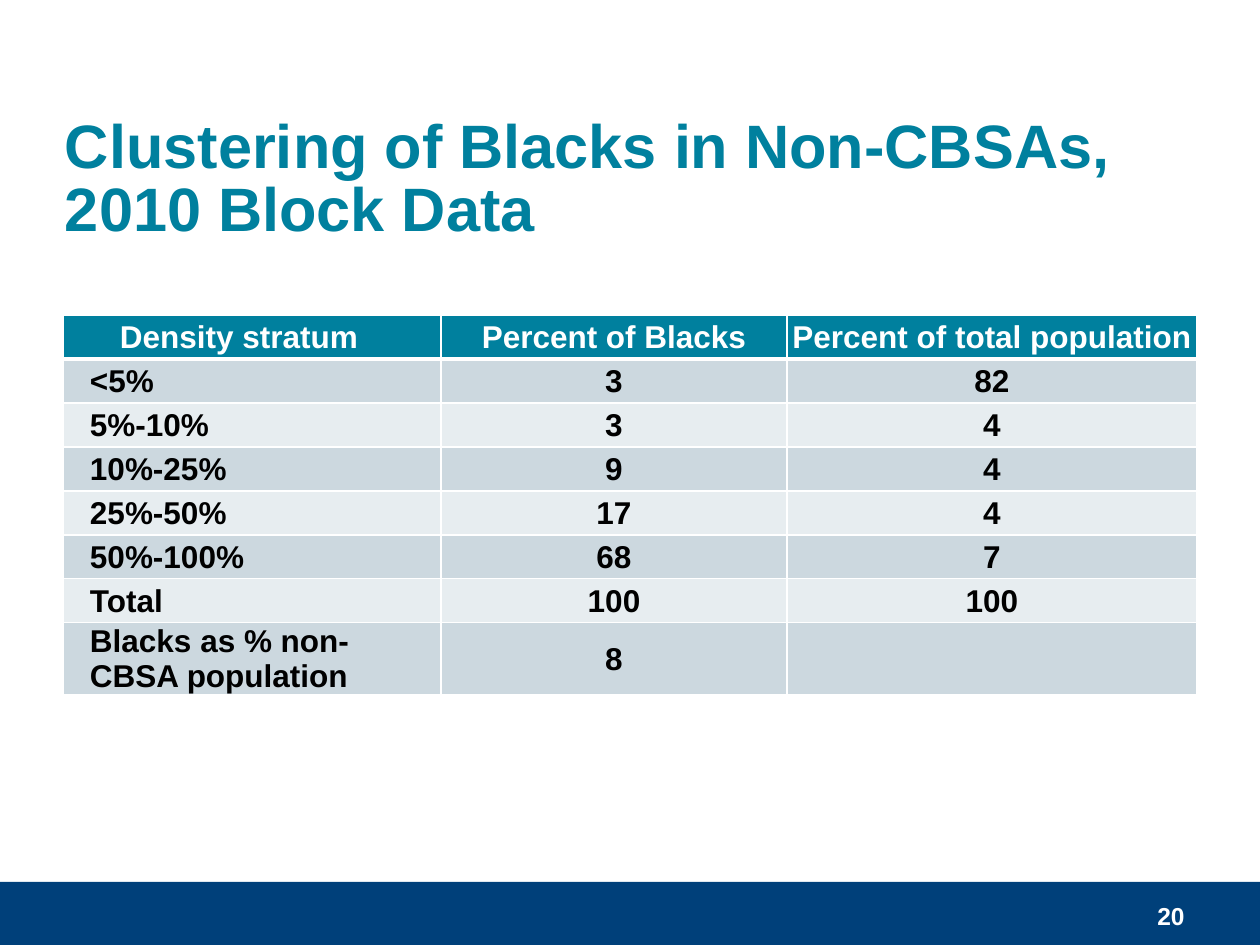
from lxml.etree import SubElement
from pptx import Presentation
from pptx.dml.color import RGBColor as Color
from pptx.enum.shapes import MSO_SHAPE as Shape
from pptx.enum.text import MSO_ANCHOR as Anchor, MSO_AUTO_SIZE as AutoSize, PP_ALIGN as Align
from pptx.oxml.ns import qn
from pptx.util import Pt

EMU_PER_PX = 914400 / 126
COLORS = {
    "teal": "00809E",
    "navy": "00407A",
    "band_dark": "CCD8DF",
    "band_light": "E7EDF0",
    "white": "FFFFFF",
    "black": "000000",
}


def px(length):
    return round(length * EMU_PER_PX)


def color(name):
    return Color.from_string(COLORS[name])


def write(frame, text, size=18, ink="black", align=Align.LEFT, leading=None):
    """Fill a text frame; each line of the text becomes a paragraph."""
    frame.word_wrap = True
    frame.text = text
    for para in frame.paragraphs:
        para.alignment = align
        if leading:
            para.line_spacing = Pt(leading)
        for span in para.runs:
            span.font.name = "Arial"
            span.font.size = Pt(size)
            span.font.bold = True
            span.font.color.rgb = color(ink)


def add_borders(cell, widths):
    properties = cell._tc.get_or_add_tcPr()
    for side, width in widths.items():
        line = SubElement(properties, qn(f"a:ln{side}"), w=str(Pt(width)))
        fill = SubElement(line, qn("a:solidFill"))
        SubElement(fill, qn("a:srgbClr"), val=COLORS["white"])


class SlideBuilder:
    def __init__(self, deck):
        self.page = deck.slides.add_slide(deck.slide_layouts[5])

    def bar(self, left, top, width, height, fill):
        box = self.page.shapes.add_shape(Shape.RECTANGLE, px(left), px(top), px(width), px(height))
        box.shadow.inherit = False
        box.fill.solid()
        box.fill.fore_color.rgb = color(fill)
        box.line.color.rgb = color(fill)
        box.line.width = Pt(0.5)

    def title(self, text, left, top, width, height, indent):
        box = self.page.shapes.title
        box.left, box.top, box.width, box.height = map(px, (left, top, width, height))
        frame = box.text_frame
        frame.auto_size = AutoSize.NONE
        frame.vertical_anchor = Anchor.MIDDLE
        frame.margin_left = px(indent)
        write(frame, text, size=35, ink="teal", leading=36)

    def label(self, text, left, top, width, height, **style):
        box = self.page.shapes.add_textbox(px(left), px(top), px(width), px(height))
        box.text_frame.vertical_anchor = Anchor.MIDDLE
        write(box.text_frame, text, **style)

    def table(self, rows, left, top, widths, heights, indent):
        frame = self.page.shapes.add_table(
            len(rows), len(widths), px(left), px(top), px(sum(widths)), px(sum(heights)))
        grid = frame.table
        for column, width in zip(grid.columns, widths):
            column.width = px(width)
        for r, (values, height) in enumerate(zip(rows, heights)):
            grid.rows[r].height = px(height)
            for c, value in enumerate(values):
                self.cell(grid.cell(r, c), value, r, c, indent)

    def cell(self, cell, text, row, col, indent):
        header = row == 0
        add_borders(cell, {"L": 1, "R": 1, "T": 3 if row == 1 else 1, "B": 3 if header else 1})
        cell.fill.solid()
        band = "band_dark" if row % 2 else "band_light"
        cell.fill.fore_color.rgb = color("teal" if header else band)
        cell.vertical_anchor = Anchor.MIDDLE
        cell.margin_left = cell.margin_right = cell.margin_top = px(1)
        cell.margin_bottom = 0
        # Stratum names are indented; their heading is shifted left to match
        if col == 0 and header:
            cell.margin_right = px(indent)
        elif col == 0:
            cell.margin_left = px(indent)
        write(cell.text_frame, text, ink="white" if header else "black",
              align=Align.CENTER if header or col else Align.LEFT)


def main():
    deck = Presentation()
    deck.slide_width, deck.slide_height = px(1260), px(945)
    slide = SlideBuilder(deck)

    # Footer band
    slide.bar(0, 882, 1260, 63, "navy")

    # Title
    slide.title("Clustering of Blacks in Non-CBSAs, \v2010 Block Data", 21, 107, 1176, 147, indent=44)

    # Density table
    rows = [
        ("Density stratum", "Percent of Blacks", "Percent of total population"),
        ("<5%", "3", "82"),
        ("5%-10%", "3", "4"),
        ("10%-25%", "9", "4"),
        ("25%-50%", "17", "4"),
        ("50%-100%", "68", "7"),
        ("Total", "100", "100"),
        ("Blacks as % non-\nCBSA population", "8", ""),
    ]
    slide.table(rows, 63, 315, widths=[378, 346, 410], heights=[44] * 7 + [72], indent=27)

    # Page number
    slide.label("20", 903, 891, 294, 50, size=14, ink="white", align=Align.RIGHT)

    deck.save("out.pptx")


if __name__ == "__main__":
    main()
